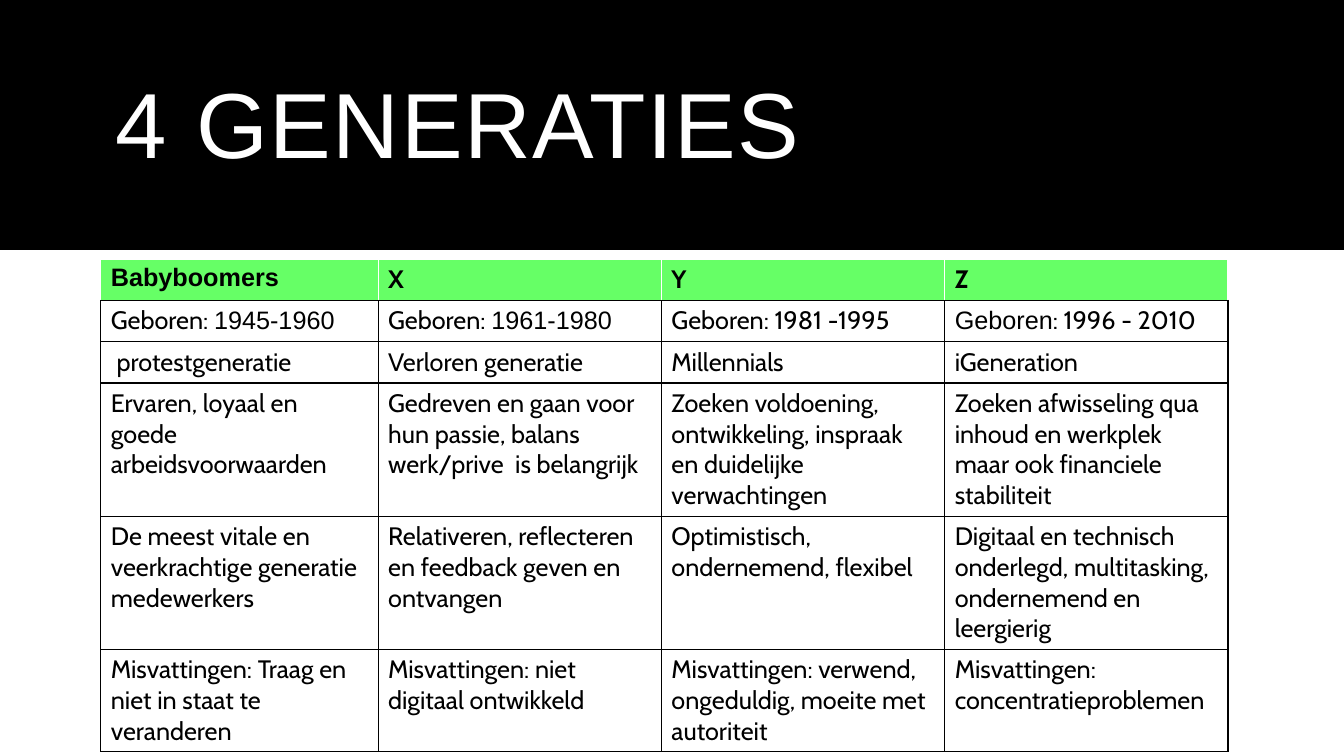
from lxml import etree
from pptx import Presentation
from pptx.dml.color import RGBColor
from pptx.enum.shapes import MSO_SHAPE
from pptx.enum.text import MSO_ANCHOR, MSO_AUTO_SIZE, PP_ALIGN
from pptx.oxml.ns import qn
from pptx.util import Inches, Pt

COLORS = {"black": "000000", "white": "FFFFFF", "green": "66FF66"}
HEADING_FONT, BODY_FONT = "Arial", "Cabin"

TITLE = "4 GENERATIES"
# A cell is plain text in the body font, or a list of (text, font) pieces
ROWS = [
    [[("Babyboomers", HEADING_FONT)], "X", "Y", "Z"],
    [[("Geboren: ", BODY_FONT), ("1945-1960", HEADING_FONT)],
     [("Geboren: ", BODY_FONT), ("1961-1980", HEADING_FONT)],
     "Geboren: 1981 -1995",
     [("Geboren", HEADING_FONT), (": 1996 - 2010", BODY_FONT)]],
    [" protestgeneratie", "Verloren generatie", "Millennials", "iGeneration"],
    ["Ervaren, loyaal en goede arbeidsvoorwaarden",
     "Gedreven en gaan voor hun passie, balans werk/prive  is belangrijk",
     "Zoeken voldoening, ontwikkeling, inspraak en duidelijke verwachtingen",
     "Zoeken afwisseling qua inhoud en werkplek maar ook financiele stabiliteit"],
    ["De meest vitale en veerkrachtige generatie medewerkers",
     "Relativeren, reflecteren en feedback geven en ontvangen",
     "Optimistisch, ondernemend, flexibel",
     "Digitaal en technisch onderlegd, multitasking, ondernemend en leergierig"],
    ["Misvattingen: Traag en niet in staat te veranderen",
     "Misvattingen: niet digitaal ontwikkeld",
     "Misvattingen: verwend, ongeduldig, moeite met autoriteit",
     "Misvattingen: concentratieproblemen"],
]
COLUMN_WIDTHS = [2.75, 2.81, 2.81, 2.81]
ROW_HEIGHT = 0.41


def color(name):
    return RGBColor.from_string(COLORS[name])


def add_text(paragraph, text, font=BODY_FONT, size=18, fill="black", bold=False, spacing=None):
    run = paragraph.add_run()
    run.text = text
    run.font.name = font
    run.font.size = Pt(size)
    run.font.bold = bold
    run.font.color.rgb = color(fill)
    if spacing:
        run.font._element.set("spc", str(round(spacing * 100)))


def set_borders(cell, sides):
    properties = cell._tc.get_or_add_tcPr()
    for index, (side, name) in enumerate(sides.items()):
        line = etree.Element(qn(f"a:ln{side}"), w=str(Pt(1)))
        solid = etree.SubElement(line, qn("a:solidFill"))
        etree.SubElement(solid, qn("a:srgbClr"), val=COLORS[name])
        properties.insert(index, line)


def add_title(slide):
    # Black band behind the title
    band = slide.shapes.add_shape(MSO_SHAPE.RECTANGLE, 0, 0, Inches(13.33), Inches(2.48))
    band.shadow.inherit = False
    band.fill.solid()
    band.fill.fore_color.rgb = color("black")
    band.line.fill.background()
    slide.shapes.element.insert(2, band.element)

    title = slide.shapes.title
    title.left, title.top = Inches(1.05), Inches(0.35)
    title.width, title.height = Inches(11.23), Inches(1.86)
    frame = title.text_frame
    frame.word_wrap = True
    frame.auto_size = MSO_AUTO_SIZE.NONE
    frame.vertical_anchor = MSO_ANCHOR.MIDDLE
    paragraph = frame.paragraphs[0]
    paragraph.alignment = PP_ALIGN.LEFT
    paragraph.line_spacing = 0.9
    add_text(paragraph, TITLE, font=HEADING_FONT, size=66, fill="white", spacing=1.2)


def add_generations(slide):
    table = slide.shapes.add_table(
        len(ROWS), len(COLUMN_WIDTHS), Inches(1), Inches(2.57),
        Inches(sum(COLUMN_WIDTHS)), Inches(ROW_HEIGHT * len(ROWS))).table
    table.horz_banding = False
    for column, width in zip(table.columns, COLUMN_WIDTHS):
        column.width = Inches(width)
    for row_index, (row, contents) in enumerate(zip(table.rows, ROWS)):
        row.height = Inches(ROW_HEIGHT)
        header = row_index == 0
        edge = "white" if header else "black"
        for cell, content in zip(row.cells, contents):
            cell.fill.solid()
            cell.fill.fore_color.rgb = color("green" if header else "white")
            set_borders(cell, {"L": edge, "R": edge, "T": edge if header else "black", "B": "black"})
            pieces = [(content, BODY_FONT)] if isinstance(content, str) else content
            for text, font in pieces:
                add_text(cell.text_frame.paragraphs[0], text, font=font, bold=header)


def main():
    presentation = Presentation()
    presentation.slide_width, presentation.slide_height = Inches(13.33), Inches(7.5)
    slide = presentation.slides.add_slide(presentation.slide_layouts[5])
    add_title(slide)
    add_generations(slide)
    presentation.save("out.pptx")


if __name__ == "__main__":
    main()
